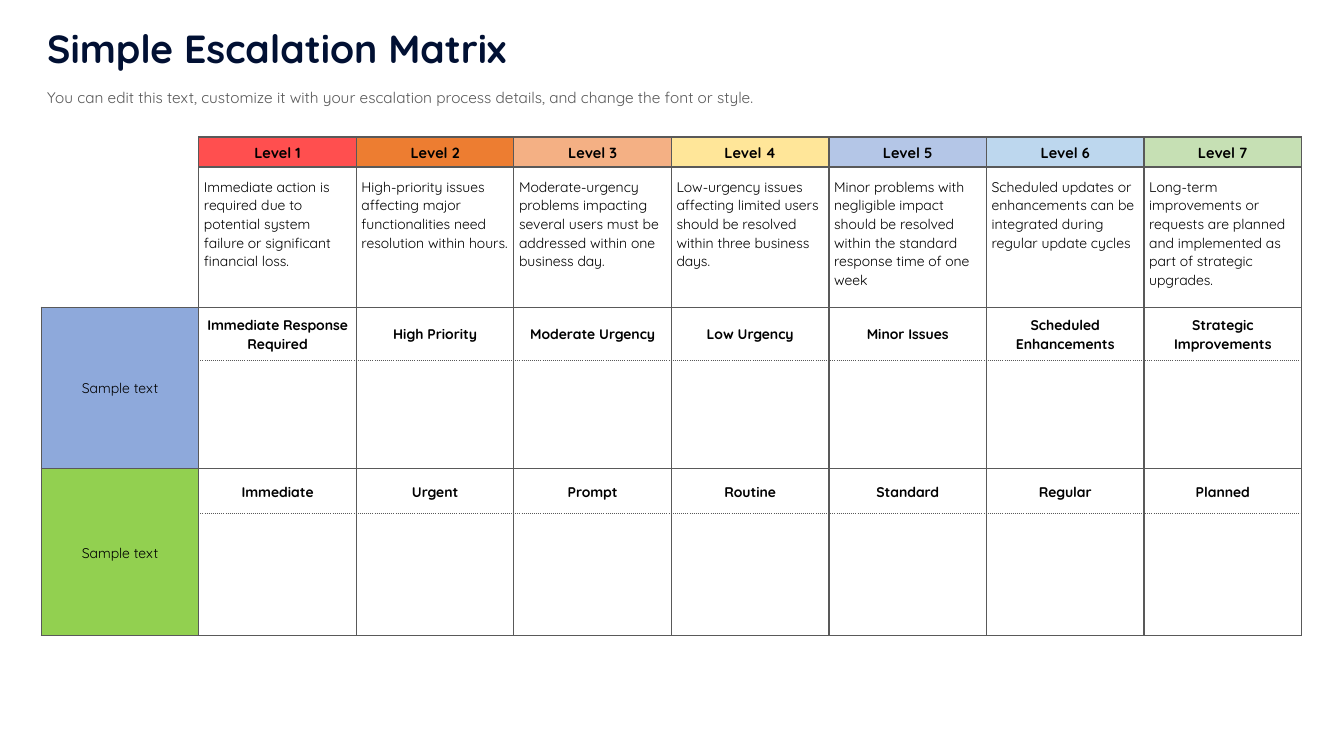
from lxml.etree import SubElement
from pptx import Presentation
from pptx.dml.color import RGBColor
from pptx.enum.text import MSO_ANCHOR, PP_ALIGN
from pptx.oxml.ns import qn
from pptx.util import Cm, Pt

FONT = "Quicksand"
COLORS = {
    "title": "011033",
    "subtitle": "595959",
    "text": "000000",
    "border": "595959",
    "response": "8EA9DB",
    "timing": "92D050",
}

# Level: fill, description, response, timing
LEVELS = [
    ("FF4F4F", "Immediate action is required due to potential system failure or significant financial loss.",
     "Immediate Response Required", "Immediate"),
    ("ED7D31", "High-priority issues affecting major functionalities need resolution within hours.",
     "High Priority", "Urgent"),
    ("F4B084", "Moderate-urgency problems impacting several users must be addressed within one business day.",
     "Moderate Urgency", "Prompt"),
    ("FFE699", "Low-urgency issues affecting limited users should be resolved within three business days.",
     "Low Urgency", "Routine"),
    ("B4C6E7", "Minor problems with negligible impact should be resolved within the standard "
     "response time of one week",
     "Minor Issues", "Standard"),
    ("BDD7EE", "Scheduled updates or enhancements can be integrated during regular update cycles",
     "Scheduled Enhancements", "Regular"),
    ("C6E0B4", "Long-term improvements or requests are planned and implemented as part of "
     "strategic upgrades.",
     "Strategic Improvements", "Planned"),
]
ROW_HEIGHTS = [0.76, 3.53, 1.35, 2.72, 1.14, 3.07]
COLUMN_WIDTH = 3.97


def set_font(paragraph, size, color, bold=False):
    paragraph.font.name = FONT
    paragraph.font.size = Pt(size)
    paragraph.font.bold = bold
    paragraph.font.color.rgb = RGBColor.from_string(color)


def add_heading(slide, text, left, top, width, height, size, color, bold=False,
                anchor=MSO_ANCHOR.TOP):
    frame = slide.shapes.add_textbox(Cm(left), Cm(top), Cm(width), Cm(height)).text_frame
    frame.word_wrap = True
    frame.vertical_anchor = anchor
    paragraph = frame.paragraphs[0]
    paragraph.text = text
    set_font(paragraph, size, color, bold)


def set_borders(cell, drawn="LRTB", dotted=""):
    """Border the sides in drawn; must run before the fill is set."""
    properties = cell._tc.get_or_add_tcPr()
    for side in "LRTB":
        line = SubElement(properties, qn(f"a:ln{side}"), w=str(Pt(1)))
        if side not in drawn:
            SubElement(line, qn("a:noFill"))
            continue
        fill = SubElement(line, qn("a:solidFill"))
        SubElement(fill, qn("a:srgbClr"), val=COLORS["border"])
        SubElement(line, qn("a:prstDash"), val="sysDot" if side in dotted else "solid")


def fill_cell(cell, text="", size=10, bold=False, fill=None, align=PP_ALIGN.CENTER,
              anchor=MSO_ANCHOR.MIDDLE, top_margin=0, space_before=0):
    cell.margin_left = cell.margin_right = Cm(0.13)
    cell.margin_top, cell.margin_bottom = Cm(top_margin), 0
    cell.vertical_anchor = anchor
    if fill:
        cell.fill.solid()
        cell.fill.fore_color.rgb = RGBColor.from_string(fill)
    else:
        cell.fill.background()
    paragraph = cell.text_frame.paragraphs[0]
    paragraph.text = text
    paragraph.alignment = align
    paragraph.line_spacing = 1.07
    paragraph.space_before = Pt(space_before)
    set_font(paragraph, size, COLORS["text"], bold)


def add_matrix(slide):
    rows, columns = len(ROW_HEIGHTS), len(LEVELS) + 1
    matrix = slide.shapes.add_table(rows, columns, Cm(1.04), Cm(3.45),
                                    Cm(COLUMN_WIDTH * columns), Cm(sum(ROW_HEIGHTS))).table
    matrix.first_row = matrix.horz_banding = False
    for column in matrix.columns:
        column.width = Cm(COLUMN_WIDTH)
    for row, height in zip(matrix.rows, ROW_HEIGHTS):
        row.height = Cm(height)

    # Borders: open corner at top left, dotted line under each sub-heading
    for r in range(rows):
        for c in range(columns):
            drawn, dotted = "LRTB", ""
            if c == 0 and r < 2:
                drawn = "R" if r == 0 else "RB"
            elif c > 0 and r >= 2:
                dotted = "B" if r % 2 == 0 else "T"
            set_borders(matrix.cell(r, c), drawn, dotted)

    # Row labels
    for r in (0, 1):
        fill_cell(matrix.cell(r, 0))
    for r, part in ((2, "response"), (4, "timing")):
        matrix.cell(r, 0).merge(matrix.cell(r + 1, 0))
        fill_cell(matrix.cell(r, 0), "Sample text", fill=COLORS[part])

    # Level columns
    for c, (color, description, response, timing) in enumerate(LEVELS, start=1):
        fill_cell(matrix.cell(0, c), f"Level {c}", size=10.5, bold=True, fill=color)
        fill_cell(matrix.cell(1, c), description, align=PP_ALIGN.LEFT,
                  anchor=MSO_ANCHOR.TOP, top_margin=0.25, space_before=12)
        for r, label in ((2, response), (4, timing)):
            fill_cell(matrix.cell(r, c), label, bold=True)
            fill_cell(matrix.cell(r + 1, c))


def main():
    presentation = Presentation()
    presentation.slide_width, presentation.slide_height = Cm(33.87), Cm(19.05)
    slide = presentation.slides.add_slide(presentation.slide_layouts[6])

    # Headings
    add_heading(slide, "Simple Escalation Matrix", 0.94, 0.48, 12.52, 1.45, 28,
                COLORS["title"], bold=True)
    add_heading(slide, "You can edit this text, customize it with your escalation process "
                "details, and change the font or style.", 0.94, 1.78, 19.61, 1.02, 11,
                COLORS["subtitle"], anchor=MSO_ANCHOR.BOTTOM)

    add_matrix(slide)
    presentation.save("out.pptx")


if __name__ == "__main__":
    main()
